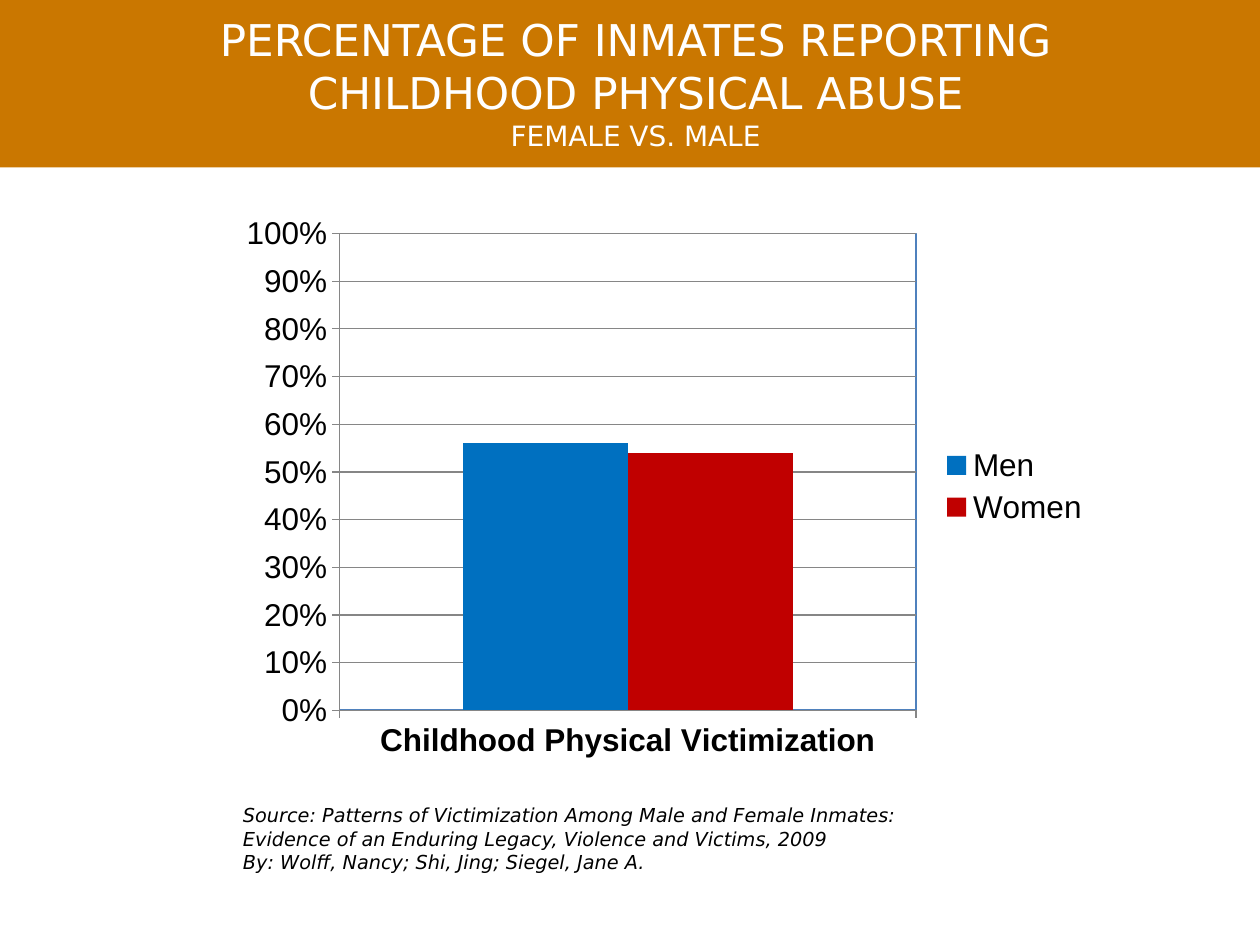
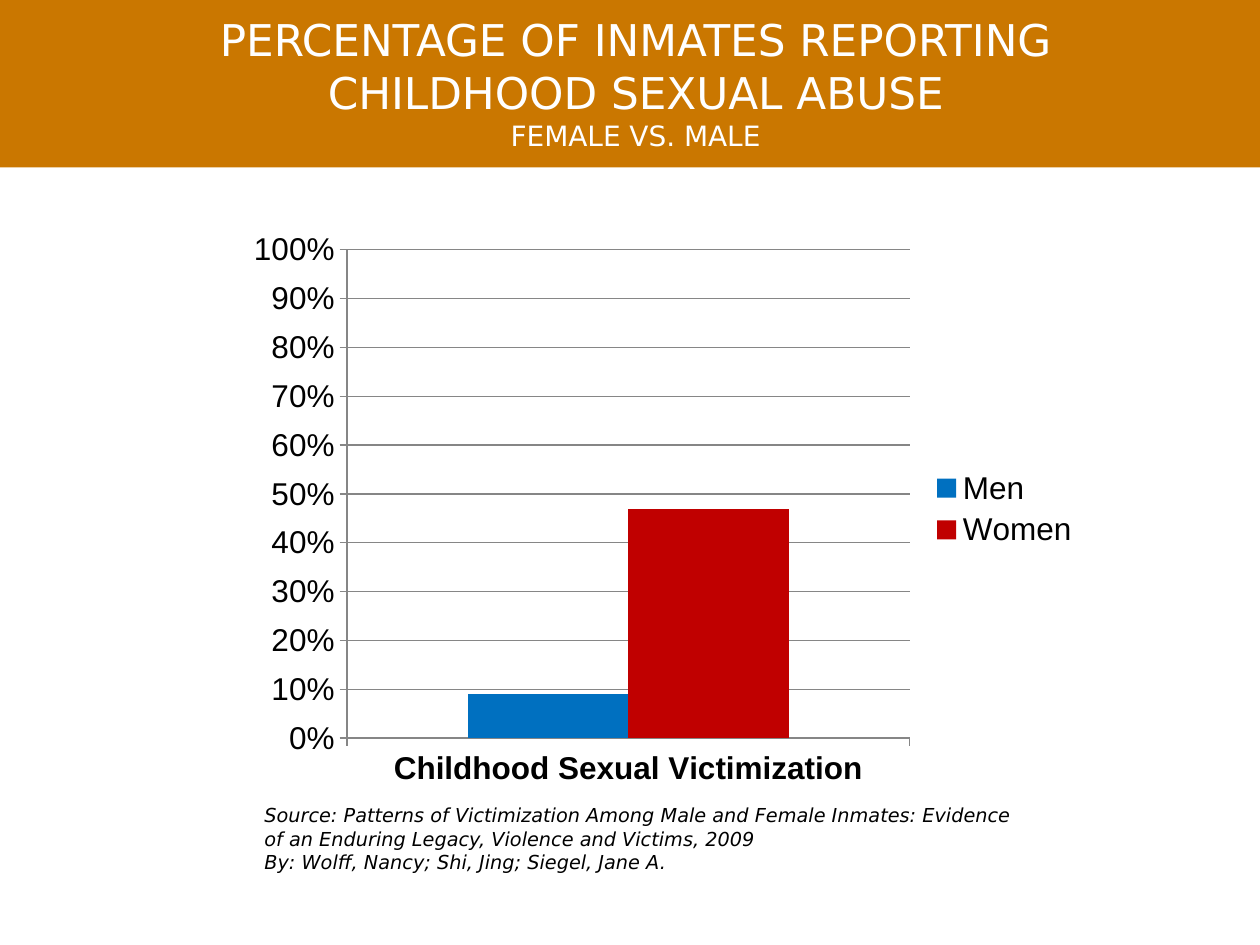
"""Build two slides comparing childhood abuse reported by male and female inmates."""
from lxml import etree
from pptx import Presentation
from pptx import util as u
from pptx.chart import data as chart_data
from pptx.dml import color as dml
from pptx.enum import chart as charts, shapes, text
from pptx.oxml import ns

BAND, WHITE, BLACK, GRID, FRAME = "CA7700", "FFFFFF", "000000", "868686", "4F81BD"
SERIES_COLORS = {"Men": "0070C0", "Women": "C00000"}
SOURCE = (
    "Source: Patterns of Victimization Among Male and Female Inmates: "
    "Evidence of an Enduring Legacy, Violence and Victims, 2009",
    "By: Wolff, Nancy; Shi, Jing; Siegel, Jane A.",
)


def rgb(value):
    return dml.RGBColor.from_string(value)


def child(parent, tag, **attributes):
    return etree.SubElement(parent, ns.qn(tag), attributes)


class AbuseDeck:
    def __init__(self):
        self.deck = Presentation()
        self.deck.slide_width, self.deck.slide_height = u.Inches(10), u.Inches(7.5)
        self.slide = None

    def new_slide(self):
        self.slide = self.deck.slides.add_slide(self.deck.slide_layouts[5])

    def master_band(self):
        band = self.slide.shapes.add_shape(
            shapes.MSO_SHAPE.RECTANGLE, 0, 0, self.deck.slide_width, u.Inches(1.33))
        band.shadow.inherit = False
        band.fill.solid()
        band.fill.fore_color.rgb = rgb(BAND)
        band.line.fill.background()
        self.deck.slide_master.shapes.element.insert(2, band.element)

    def fill_box(self, box, place, lines, sizes, color, align, anchor, italic=False):
        box.left, box.top, box.width, box.height = map(u.Inches, place)
        frame = box.text_frame
        frame.text = "\n".join(lines)
        frame.word_wrap = True
        frame.auto_size = text.MSO_AUTO_SIZE.NONE
        frame.vertical_anchor = anchor
        for para, size in zip(frame.paragraphs, sizes):
            para.alignment = align
            for span in para.runs:
                span.font.name = "DejaVu Sans"
                span.font.size = u.Pt(size)
                span.font.italic = italic
                span.font.color.rgb = rgb(color)

    def title(self, abuse):
        lines = (f"PERCENTAGE OF INMATES REPORTING CHILDHOOD {abuse.upper()} ABUSE",
                 "FEMALE VS. MALE")
        self.fill_box(self.slide.shapes.title, (0.92, 0.03, 8.25, 1.25), lines, (25, 16),
                      WHITE, text.PP_ALIGN.CENTER, text.MSO_ANCHOR.MIDDLE)

    def source(self, left, width):
        place = (left, 6.33, width, 0.66)
        box = self.slide.shapes.add_textbox(*map(u.Inches, place))
        self.fill_box(box, place, SOURCE, (11, 11), BLACK,
                      text.PP_ALIGN.LEFT, text.MSO_ANCHOR.TOP, italic=True)

    def chart(self, place, category, values):
        data = chart_data.CategoryChartData(number_format="0%")
        data.categories = [category]
        for name, value in zip(SERIES_COLORS, values):
            data.add_series(name, [value])
        chart = self.slide.shapes.add_chart(
            charts.XL_CHART_TYPE.COLUMN_CLUSTERED, *map(u.Inches, place), data).chart
        chart.has_title = False
        chart.font.name, chart.font.size = "Arial", u.Pt(18)
        chart.font.color.rgb = rgb(BLACK)
        chart.has_legend = True
        chart.legend.position = charts.XL_LEGEND_POSITION.RIGHT
        chart.legend.include_in_layout = False
        plot = chart.plots[0]
        plot.gap_width, plot.vary_by_categories = 150, False
        for series in plot.series:
            series.format.fill.solid()
            series.format.fill.fore_color.rgb = rgb(SERIES_COLORS[series.name])
        scale = chart.value_axis
        scale.minimum_scale, scale.maximum_scale, scale.major_unit = 0, 1, 0.1
        scale.has_major_gridlines = True
        scale.tick_labels.number_format = "0%"
        scale.tick_labels.number_format_is_linked = False
        chart.category_axis.tick_labels.font.bold = True
        for axis in (scale, chart.category_axis):
            axis.major_tick_mark = charts.XL_TICK_MARK.OUTSIDE
        for part in (scale, scale.major_gridlines, chart.category_axis):
            part.format.line.color.rgb = rgb(GRID)
            part.format.line.width = u.Pt(0.75)
        return chart

    def frame_plot(self, chart, x, y, w, h):
        area = chart.element.find(".//" + ns.qn("c:plotArea")) if hasattr(chart, "element") \
            else chart.plots[0]._element.getparent()
        for old in area.findall(ns.qn("c:layout")):
            area.remove(old)
        layout = etree.Element(ns.qn("c:layout"))
        area.insert(0, layout)
        manual = child(layout, "c:manualLayout")
        settings = {"layoutTarget": "inner", "xMode": "edge", "yMode": "edge",
                    "x": x, "y": y, "w": w, "h": h}
        for name, value in settings.items():
            child(manual, f"c:{name}", val=str(value))
        outline = child(child(area, "c:spPr"), "a:ln", w=str(u.Pt(1)))
        child(child(outline, "a:solidFill"), "a:srgbClr", val=FRAME)


def main():
    show = AbuseDeck()
    show.new_slide()
    show.master_band()
    show.title("Physical")
    chart = show.chart((1.71, 1.58, 7.04, 4.56), "Childhood Physical Victimization", (0.56, 0.54))
    show.frame_plot(chart, 0.14, 0.06, 0.65, 0.83)
    show.source(1.83, 6.08)

    show.new_slide()
    show.title("Sexual")
    show.chart((1.88, 1.75, 6.79, 4.58), "Childhood Sexual Victimization", (0.09, 0.47))
    show.source(2, 6.17)
    show.deck.save("out.pptx")


if __name__ == "__main__":
    main()
